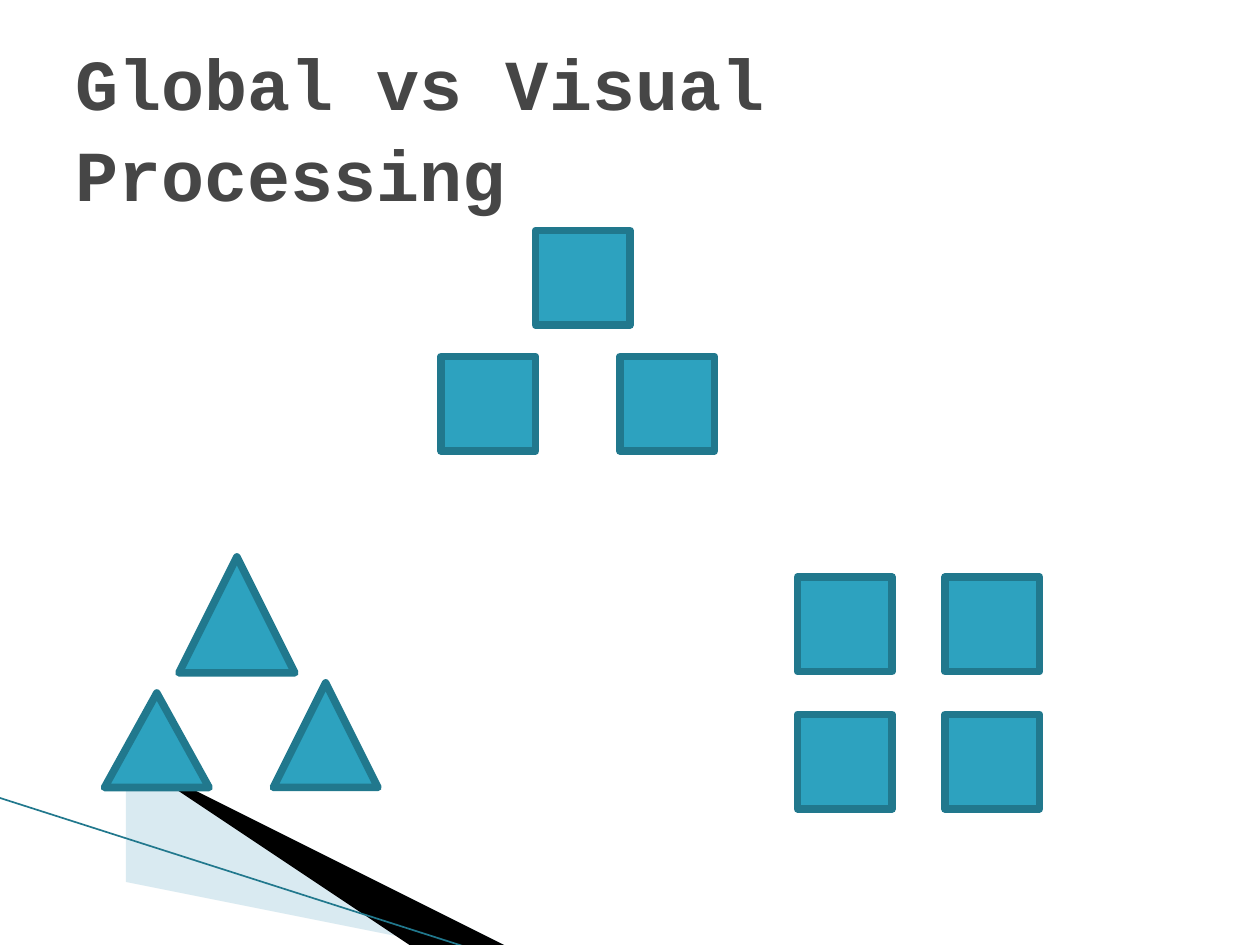
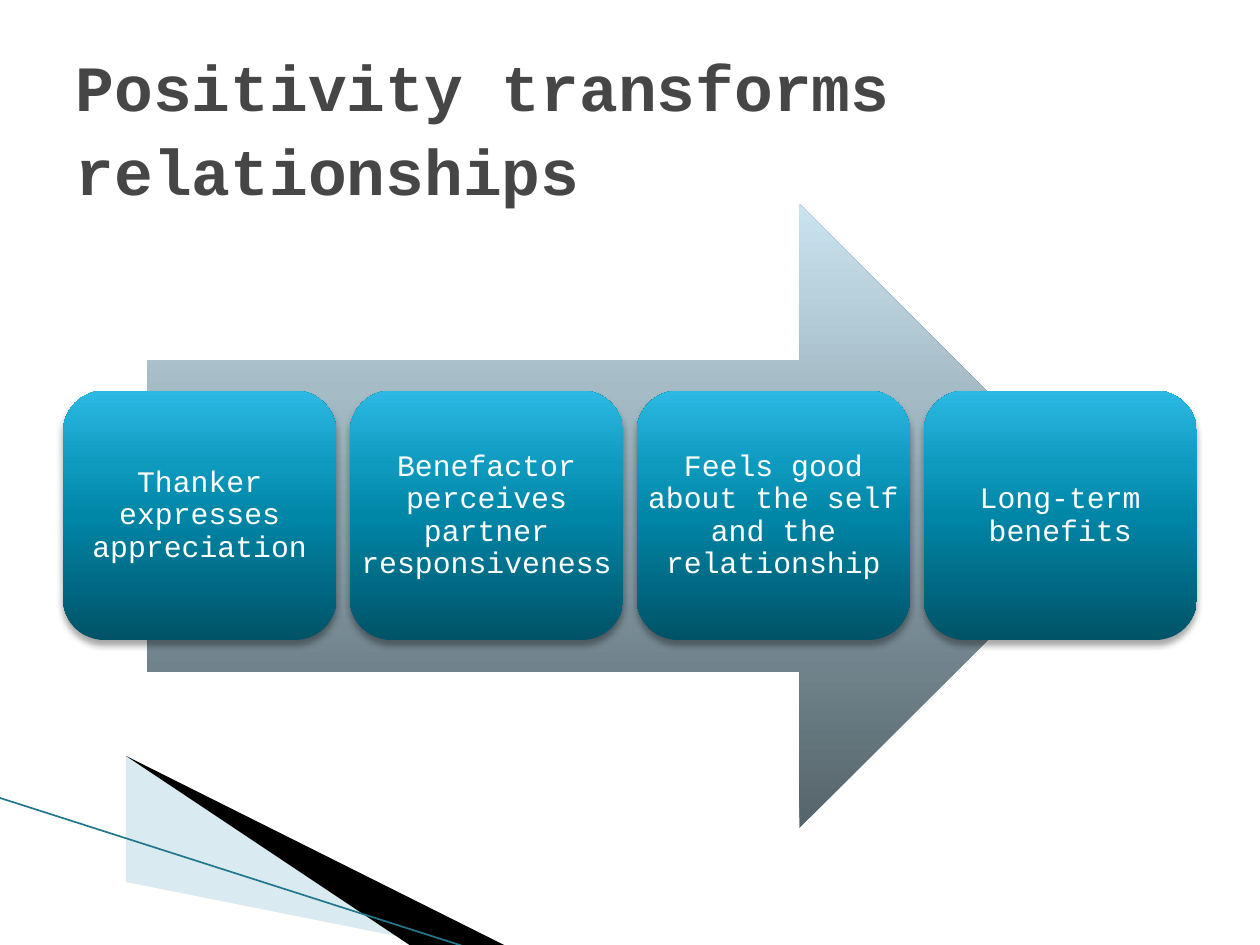
from dataclasses import dataclass

from lxml.etree import SubElement
from pptx import Presentation
from pptx.dml.color import RGBColor
from pptx.enum.shapes import MSO_CONNECTOR, MSO_SHAPE
from pptx.enum.text import MSO_ANCHOR, MSO_AUTO_SIZE, PP_ALIGN
from pptx.oxml.ns import qn
from pptx.util import Inches, Pt


@dataclass(frozen=True)
class Theme:
    font: str = "Courier New"
    title_color: str = "464646"
    card_text: str = "FFFFFF"
    accent: str = "2DA2BF"
    accent_dark: str = "21788D"
    wedge_light: str = "A0CBDC"
    wedge_dark: str = "000000"
    shadow: str = "000000"
    arrow_stops: tuple = ((0, "55646A"), (50, "8AA1AB"), (70, "A5BCC7"), (100, "C9E4F0"))
    card_stops: tuple = ((0, "005367"), (50, "0086A7"), (70, "0E9ABE"), (100, "2CB9E3"))
    card_size: float = 17
    outline: float = 4.33


theme = Theme()


def add_titled_slide(title_text, title_size, line_spacing):
    """Add a slide with the corner wedge and a formatted title."""
    slide = presentation.slides.add_slide(title_only)
    wedges = (
        (((0.55, 6.51), (5.95, 7.51), (4.56, 7.51), (0.55, 6.5)), theme.wedge_light, 40),
        (((0.53, 6.49), (4.57, 7.51), (3.72, 7.52), (0.54, 6.5)), theme.wedge_dark, 100),
    )
    for points, color, opacity in wedges:
        builder = slide.shapes.build_freeform(*points[0], scale=Inches(1))
        builder.add_line_segments(points[1:])
        wedge = builder.convert_to_shape()
        wedge.shadow.inherit = False
        wedge.line.fill.background()
        wedge.fill.solid()
        wedge.fill.fore_color.rgb = RGBColor.from_string(color)
        if opacity < 100:
            color_element = wedge.element.spPr.find(f"{qn('a:solidFill')}/{qn('a:srgbClr')}")
            SubElement(color_element, qn("a:alpha"), val=str(opacity * 1000))
    edge = slide.shapes.add_connector(
        MSO_CONNECTOR.STRAIGHT, Inches(-0.01), Inches(6.33), Inches(3.71), Inches(7.52))
    edge.line.color.rgb = RGBColor.from_string(theme.accent_dark)
    edge.line.width = Pt(0.95)
    SubElement(edge.element.spPr, qn("a:effectLst"))

    title = slide.shapes.title
    title.left, title.top, title.width, title.height = (
        Inches(value) for value in (0.5, 0.3, 9, 1.25))
    frame = title.text_frame
    frame.text = title_text
    frame.word_wrap = True
    frame.auto_size = MSO_AUTO_SIZE.NONE
    frame.vertical_anchor = MSO_ANCHOR.MIDDLE
    frame.margin_top = Inches(0.18)
    paragraph = frame.paragraphs[0]
    paragraph.alignment = PP_ALIGN.LEFT
    paragraph.line_spacing = line_spacing
    paragraph.font.name = theme.font
    paragraph.font.size = Pt(title_size)
    paragraph.font.bold = True
    paragraph.font.color.rgb = RGBColor.from_string(theme.title_color)
    return slide


def add_gradient_shape(slide, kind, left, top, width, height, stops):
    """Add an outline-free shape whose gradient runs from bottom to top."""
    shape = slide.shapes.add_shape(
        kind, Inches(left), Inches(top), Inches(width), Inches(height))
    shape.shadow.inherit = False
    shape.line.fill.background()
    shape.fill.gradient()
    shape.fill.gradient_angle = 90
    stop_list = shape.element.spPr.find(f"{qn('a:gradFill')}/{qn('a:gsLst')}")
    for old_stop in list(stop_list):
        stop_list.remove(old_stop)
    for position, color in stops:
        stop = SubElement(stop_list, qn("a:gs"), pos=str(position * 1000))
        SubElement(stop, qn("a:srgbClr"), val=color)
    return shape


presentation = Presentation()
presentation.slide_width = Inches(10)
presentation.slide_height = Inches(7.5)
title_only = presentation.slide_layouts[5]

# Figures made of smaller figures
slide = add_titled_slide("Global vs Visual Processing", 41, 1.06)
side = 0.75
triangle_of_squares = [(4.25, 1.83), (3.5, 2.83), (4.92, 2.83)]
square_of_squares = [(left, top) for top in (4.58, 5.67) for left in (6.33, 7.5)]
figures = [(MSO_SHAPE.RECTANGLE, left, top, side, side)
           for left, top in triangle_of_squares + square_of_squares]
figures += [(MSO_SHAPE.ISOSCELES_TRIANGLE, *box) for box in (
    (1.42, 4.42, 0.92, 0.92), (0.83, 5.5, 0.83, 0.75), (2.17, 5.42, 0.83, 0.83))]
for kind, *box in figures:
    figure = slide.shapes.add_shape(kind, *(Inches(value) for value in box))
    figure.shadow.inherit = False
    figure.fill.solid()
    figure.fill.fore_color.rgb = RGBColor.from_string(theme.accent)
    figure.line.color.rgb = RGBColor.from_string(theme.accent_dark)
    figure.line.width = Pt(theme.outline)
    SubElement(figure.element.spPr.find(qn("a:ln")), qn("a:round"))

# Four steps along an arrow
slide = add_titled_slide("Positivity transforms relationships", 36.9, 1.08)
add_gradient_shape(slide, MSO_SHAPE.RIGHT_ARROW, 1.17, 1.62, 7.65, 4.95, theme.arrow_stops)
steps = (
    "Thanker expresses appreciation",
    "Benefactor perceives partner responsiveness",
    "Feels good about the self and the relationship",
    "Long-term benefits",
)
card_top, card_width, card_height = 3.1, 2.17, 1.98
first_left, last_left = 0.5, 7.33
pitch = (last_left - first_left) / (len(steps) - 1)
for index, step in enumerate(steps):
    left = first_left + index * pitch
    card = add_gradient_shape(slide, MSO_SHAPE.ROUNDED_RECTANGLE, left, card_top,
                              card_width, card_height, theme.card_stops)
    shadow = SubElement(card.element.spPr.find(qn("a:effectLst")), qn("a:outerShdw"),
                        blurRad=str(Pt(4)), dist=str(Pt(3)), dir="5400000", rotWithShape="0")
    shadow_color = SubElement(shadow, qn("a:srgbClr"), val=theme.shadow)
    SubElement(shadow_color, qn("a:alpha"), val="35000")

    # A separate box gives the longest words the full card width
    label = slide.shapes.add_textbox(
        Inches(left), Inches(card_top), Inches(card_width), Inches(card_height))
    frame = label.text_frame
    frame.text = step
    frame.word_wrap = True
    frame.vertical_anchor = MSO_ANCHOR.MIDDLE
    frame.margin_left = frame.margin_right = Inches(0.07)
    frame.margin_top = frame.margin_bottom = Inches(0.07)
    paragraph = frame.paragraphs[0]
    paragraph.alignment = PP_ALIGN.CENTER
    paragraph.line_spacing = 0.9
    paragraph.font.name = theme.font
    paragraph.font.size = Pt(theme.card_size)
    paragraph.font.color.rgb = RGBColor.from_string(theme.card_text)

presentation.save("out.pptx")
